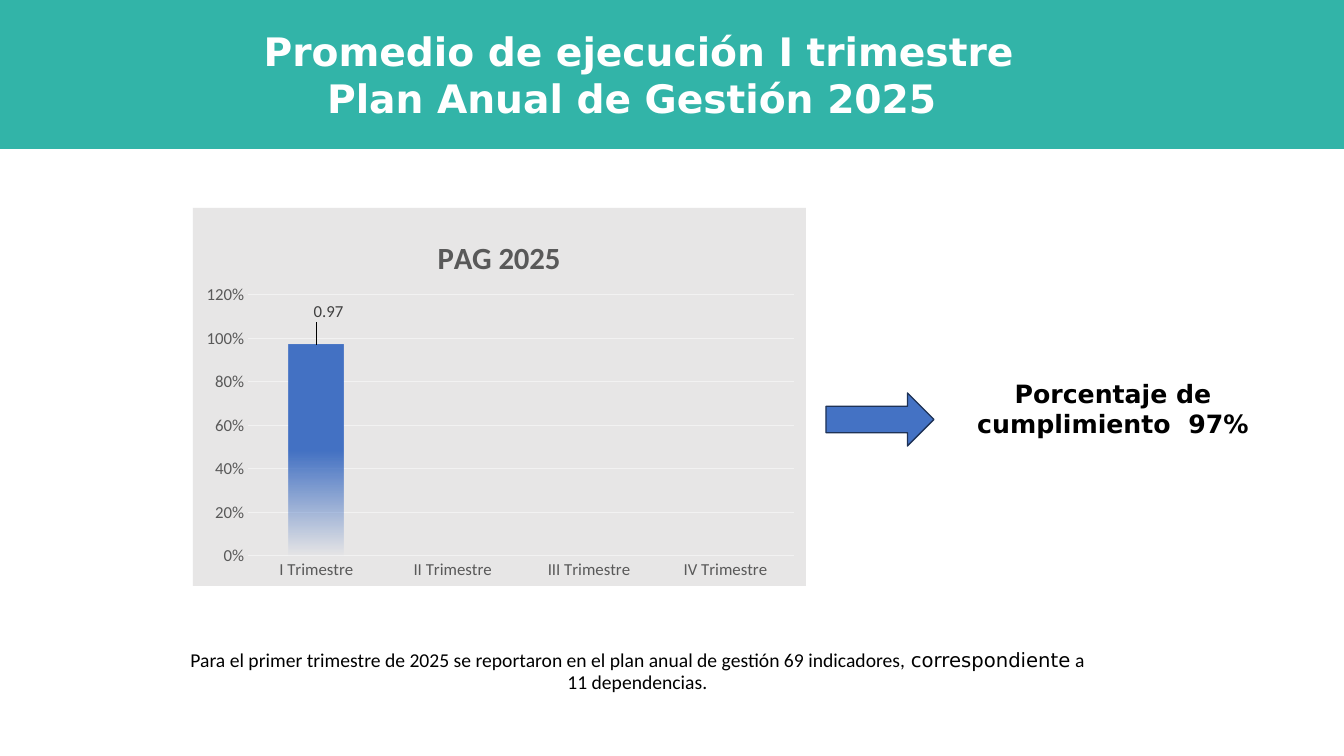
from lxml import etree
from pptx import Presentation
from pptx import util as u
from pptx.chart.data import CategoryChartData
from pptx.dml.color import RGBColor
from pptx.enum import chart as ch, shapes, text
from pptx.oxml import parse_xml
from pptx.oxml.ns import nsdecls, qn

PX = 914400 / 100.8
COLORS = {k: RGBColor.from_string(v) for k, v in {
    "teal": "32B4A8", "white": "FFFFFF", "black": "000000", "blue": "4472C4",
    "navy": "1E3256", "panel": "E7E6E6", "grid": "F2F2F2",
    "axis": "595959", "label": "404040"}.items()}


def box(*lengths):
    return [u.Emu(round(n * PX)) for n in lengths]


def style(font, size, color, name="Calibri", bold=False):
    font.size, font.name, font.bold = u.Pt(size), name, bold
    font.color.rgb = COLORS[color]


prs = Presentation()
prs.slide_width, prs.slide_height = box(1344, 756)
s = prs.slides.add_slide(prs.slide_layouts[5])

# Header band, behind the title
band = s.shapes.add_shape(shapes.MSO_SHAPE.RECTANGLE, *box(0, 0, 1344, 149))
band.shadow.inherit = False
band.fill.solid()
band.fill.fore_color.rgb = COLORS["teal"]
band.line.fill.background()
s.shapes._spTree.insert(2, band._element)

# Title and result text
title = s.shapes.title
title.left, title.top, title.width, title.height = box(206, 17, 865, 105)
result = s.shapes.add_textbox(*box(953, 368, 320, 79))
for sp, words, size, color in (
        (title, "Promedio de ejecución I trimestre Plan Anual de Gestión 2025 ", 28, "white"),
        (result, "Porcentaje de cumplimiento  97%", 18, "black")):
    tf = sp.text_frame
    tf.word_wrap = True
    tf.auto_size = text.MSO_AUTO_SIZE.NONE
    tf.vertical_anchor = text.MSO_ANCHOR.TOP
    tf.margin_left = tf.margin_right = tf.margin_top = tf.margin_bottom = u.Inches(0.1)
    p = tf.paragraphs[0]
    p.text = words
    p.alignment = text.PP_ALIGN.CENTER
    style(p.font, size, color, "DejaVu Sans", True)

# Arrow from the chart to the result
arrow = s.shapes.add_shape(shapes.MSO_SHAPE.RIGHT_ARROW, *box(826, 393, 108, 53))
arrow.shadow.inherit = False
arrow.fill.solid()
arrow.fill.fore_color.rgb = COLORS["blue"]
arrow.line.color.rgb = COLORS["navy"]
arrow.line.width = u.Pt(1)

# Column chart
data = CategoryChartData(number_format="General")
data.categories = [f"{n} Trimestre" for n in ("I", "II", "III", "IV")]
data.add_series("Series 1", (0.97, None, None, None))
chart = s.shapes.add_chart(ch.XL_CHART_TYPE.COLUMN_CLUSTERED,
                           *box(193, 208, 613, 378), data).chart
style(chart.font, 10, "black")
chart.has_legend = False
chart.has_title = True
p = chart.chart_title.text_frame.paragraphs[0]
p.text = "PAG 2025"
style(p.font, 22, "axis", bold=True)

# Axes
cat, val = chart.category_axis, chart.value_axis
for axis in (cat, val):
    axis.major_tick_mark = axis.minor_tick_mark = ch.XL_TICK_MARK.NONE
    axis.format.line.fill.background()
    style(axis.tick_labels.font, 12, "axis")
val.minimum_scale, val.maximum_scale, val.major_unit = 0, 1.2, 0.2
val.tick_labels.number_format = "0%"
val.tick_labels.number_format_is_linked = False
val.major_gridlines.format.line.color.rgb = COLORS["grid"]
val.major_gridlines.format.line.width = u.Pt(0.75)

# Bar that fades out towards its foot
plot = chart.plots[0]
plot.gap_width = 150
plot.vary_by_categories = False
series = plot.series[0]
fill = series.format.fill
fill.gradient()
fill.gradient_angle = 270
for stop, position in zip(fill.gradient_stops, (0.5, 1)):
    stop.position = position
    stop.color.rgb = COLORS["blue"]
foot = series._element.findall(".//" + qn("a:srgbClr"))[-1]
etree.SubElement(foot, qn("a:alpha")).set("val", "0")

# Value labels
labels = series.data_labels
labels.show_value = True
labels.position = ch.XL_LABEL_POSITION.OUTSIDE_END
style(labels.font, 12, "label")
first = series.points[0].data_label
first.position = ch.XL_LABEL_POSITION.OUTSIDE_END
style(first.font, 12, "label")


# Manual places inside the chart, as fractions of its size
def place(parent, index, **values):
    for old in parent.findall(qn("c:layout")):
        parent.remove(old)
    items = "".join(f'<c:{k} val="{v}"/>' for k, v in values.items())
    parent.insert(index, parse_xml(
        f'<c:layout {nsdecls("c")}><c:manualLayout>{items}</c:manualLayout></c:layout>'))


place(chart._chartSpace.chart.plotArea, 0, layoutTarget="inner", xMode="edge",
      yMode="edge", x=0.09, y=0.23, w=0.89, h=0.69)
place(chart.chart_title._element, 1, xMode="edge", yMode="edge", x=0.39, y=0.06)
place(series._element.find(".//" + qn("c:dLbl")), 1, x=0.02, y=-0.05)

# Chart background
panel = parse_xml(f'<c:spPr {nsdecls("c", "a")}><a:solidFill><a:srgbClr val="{COLORS["panel"]}"/>'
                  '</a:solidFill><a:ln><a:noFill/></a:ln></c:spPr>')
chart._chartSpace.chart.addnext(panel)

# Footnote
tf = s.shapes.add_textbox(*box(173, 646, 929, 53)).text_frame
tf.word_wrap = True
tf.auto_size = text.MSO_AUTO_SIZE.SHAPE_TO_FIT_TEXT
p = tf.paragraphs[0]
p.alignment = text.PP_ALIGN.CENTER
p.line_spacing = 0.9
p.space_after = u.Pt(6)
for words, name in (
        ("Para el primer trimestre de 2025 se reportaron en el plan anual de gestión 69 indicadores, ",
         "Calibri"),
        ("correspondiente", "DejaVu Sans"),
        (" a 11 dependencias.", "Calibri")):
    r = p.add_run()
    r.text = words
    style(r.font, 14, "black", name)

prs.save("out.pptx")
